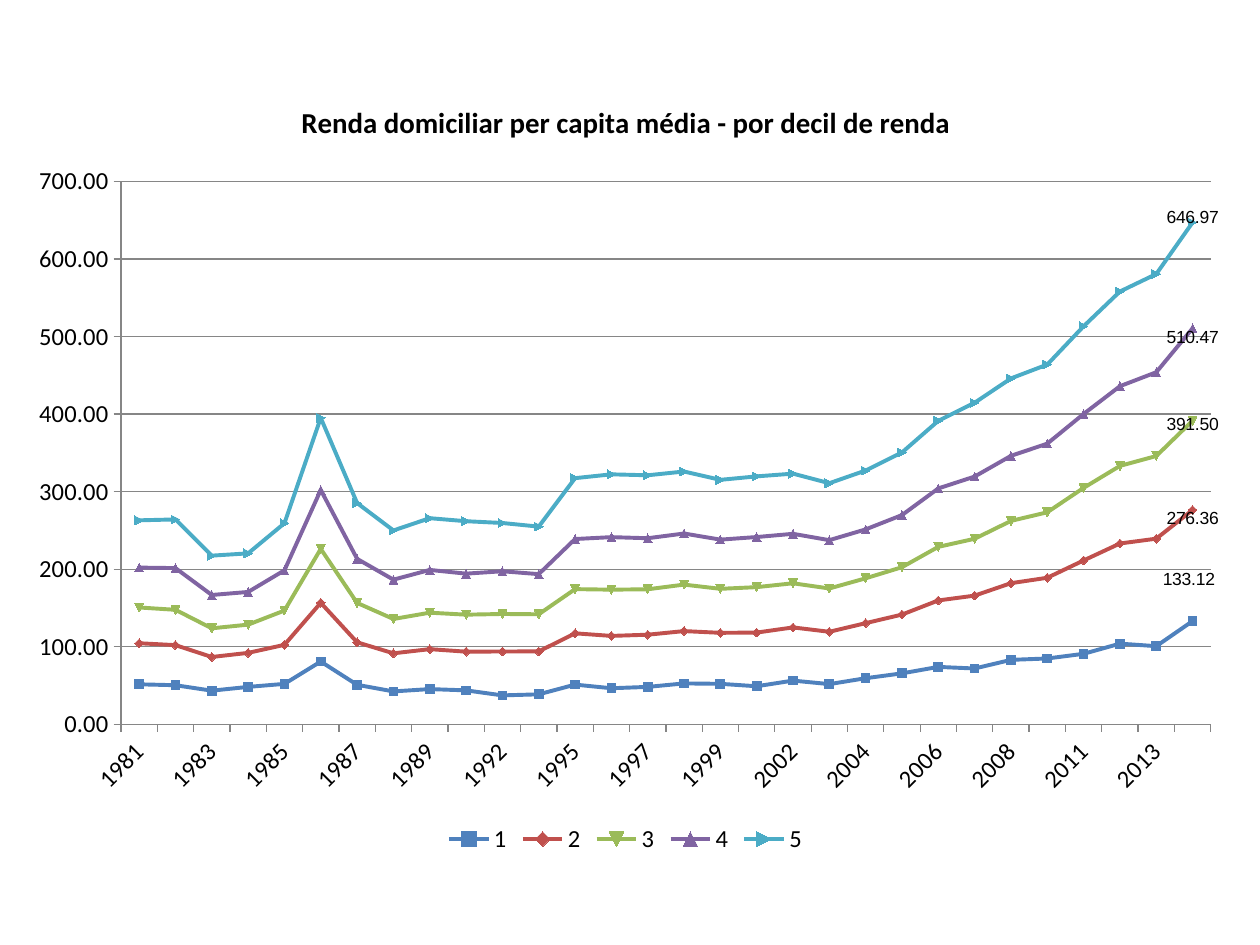
import pptx
import pptx.chart.data
import pptx.dml.color
import pptx.enum.chart
import pptx.oxml
import pptx.oxml.ns
import pptx.util
from pptx.util import Inches

CHART_WIDTH, CHART_HEIGHT = 9.69, 6.22
TITLE = "Renda domiciliar per capita média - por decil de renda"
SKIPPED_YEARS = (1991, 1994, 2000, 2010)
YEARS = [str(y) for y in range(1981, 2015) if y not in SKIPPED_YEARS]
NUMBER_FORMAT = "#,##0.00"
DECILES = [
    ("1", "4F81BD", (-0.03, -0.33), [
        51.54, 50.42, 43.4, 48.22, 52.15, 80.92, 50.96, 42.42, 45.46, 43.75,
        37.34, 38.68, 51.2, 46.52, 48.23, 52.71, 52.23, 49.08, 56.34, 51.84,
        59.42, 65.73, 74.0, 71.97, 83.08, 84.89, 90.92, 104.03, 100.72, 133.12]),
    ("2", "C0504D", (0, 0.07), [
        104.54, 102.09, 86.81, 92.12, 102.45, 156.65, 105.72, 91.51, 96.88, 93.67,
        93.92, 93.97, 117.31, 113.97, 115.5, 120.18, 117.97, 118.27, 124.89, 119.27,
        130.44, 141.48, 159.68, 165.88, 181.94, 188.9, 211.24, 233.12, 239.32, 276.36]),
    ("3", "9BBB59", (0, 0.03), [
        150.6, 147.61, 123.78, 128.51, 146.64, 226.14, 156.52, 135.77, 143.9, 141.33,
        142.22, 141.89, 174.27, 173.58, 174.09, 180.12, 174.67, 176.81, 181.8, 175.08,
        188.24, 202.57, 228.79, 239.18, 262.23, 273.33, 304.81, 333.18, 345.88, 391.5]),
    ("4", "8064A2", (0, 0.07), [
        202.04, 201.38, 166.73, 170.63, 198.5, 302.07, 213.3, 186.51, 199.01, 194.25,
        197.28, 193.59, 238.89, 241.29, 239.9, 245.97, 238.07, 241.41, 245.59, 237.38,
        251.25, 269.73, 304.1, 319.35, 346.16, 361.91, 400.11, 435.95, 453.9, 510.47]),
    ("5", "4BACC6", (0, -0.04), [
        262.97, 264.13, 217.47, 220.39, 259.19, 395.06, 285.23, 249.91, 265.7, 261.8,
        259.54, 254.87, 317.3, 322.24, 321.06, 325.9, 315.15, 319.64, 323.16, 310.83,
        327.15, 350.5, 391.34, 414.6, 445.99, 463.84, 513.2, 558.0, 580.51, 646.97]),
]


def rgb(color):
    return pptx.dml.color.RGBColor.from_string(color)


def set_font(font, size, name="Calibri", bold=False):
    font.size = pptx.util.Pt(size)
    font.name = name
    font.bold = bold
    font.color.rgb = rgb("000000")


def set_line(line, color, width):
    line.color.rgb = rgb(color)
    line.width = pptx.util.Pt(width)


def set_layout(parent, index, x, y, w=None, h=None, **modes):
    for old in parent.findall(pptx.oxml.ns.qn("c:layout")):
        parent.remove(old)
    settings = dict(modes, x=x / CHART_WIDTH, y=y / CHART_HEIGHT)
    if w and h:
        settings.update(w=w / CHART_WIDTH, h=h / CHART_HEIGHT)
    values = "".join(f'<c:{k} val="{v}"/>' for k, v in settings.items())
    xml = (f'<c:layout {pptx.oxml.ns.nsdecls("c")}>'
           f'<c:manualLayout>{values}</c:manualLayout></c:layout>')
    parent.insert(index, pptx.oxml.parse_xml(xml))


def hide_leader_lines(labels):
    tag = pptx.oxml.ns.qn("c:showLeaderLines")
    for old in labels.findall(tag):
        labels.remove(old)
    labels.append(pptx.oxml.parse_xml(
        f'<c:showLeaderLines {pptx.oxml.ns.nsdecls("c")} val="0"/>'))
    chart15 = "http://schemas.microsoft.com/office/drawing/2012/chart"
    labels.append(pptx.oxml.parse_xml(
        f'<c:extLst {pptx.oxml.ns.nsdecls("c")}>'
        f'<c:ext uri="{{CE6537A1-D6FC-4f65-9D91-7224C49458BB}}" xmlns:c15="{chart15}">'
        '<c15:showLeaderLines val="0"/></c:ext></c:extLst>'))


def add_line_chart(s):
    data = pptx.chart.data.CategoryChartData(number_format=NUMBER_FORMAT)
    data.categories = YEARS
    for name, _, _, values in DECILES:
        data.add_series(name, values)
    frame = s.shapes.add_chart(
        pptx.enum.chart.XL_CHART_TYPE.LINE_MARKERS,
        Inches(0.12), Inches(0.6), Inches(CHART_WIDTH), Inches(CHART_HEIGHT), data)
    chart = frame.chart
    set_font(chart.font, 14)
    chart.plots[0].vary_by_categories = False
    set_layout(chart._chartSpace.chart.plotArea, 0, 0.84, 0.84, 8.65, 4.31,
               layoutTarget="inner", xMode="edge", yMode="edge")
    return chart


def format_title(chart):
    chart.has_title = True
    title = chart.chart_title
    title.include_in_layout = True
    p = title.text_frame.paragraphs[0]
    p.text = TITLE
    set_font(p.font, 16.5, bold=True)
    set_layout(title._element, 1, 2.23, 0.17, xMode="edge", yMode="edge")


def format_legend(chart):
    chart.has_legend = True
    chart.legend.position = pptx.enum.chart.XL_LEGEND_POSITION.BOTTOM
    chart.legend.include_in_layout = False
    set_font(chart.legend.font, 14)


def format_axes(chart):
    for axis in (chart.category_axis, chart.value_axis):
        axis.major_tick_mark = pptx.enum.chart.XL_TICK_MARK.OUTSIDE
        set_line(axis.format.line, "868686", 0.75)
        set_font(axis.tick_labels.font, 14)
    values = chart.value_axis
    values.minimum_scale, values.maximum_scale, values.major_unit = 0, 700, 100
    values.has_major_gridlines = True
    set_line(values.major_gridlines.format.line, "868686", 0.75)
    values.tick_labels.number_format = NUMBER_FORMAT
    values.tick_labels.number_format_is_linked = False


def format_series(series, color, offset):
    series.smooth = False
    set_line(series.format.line, color, 2.25)
    series.marker.format.fill.solid()
    series.marker.format.fill.fore_color.rgb = rgb(color)
    set_line(series.marker.format.line, color, 0.75)
    series.data_labels.show_value = False
    label = series.points[len(YEARS) - 1].data_label
    set_font(label.font, 10, "Arial")
    label.position = pptx.enum.chart.XL_LABEL_POSITION.CENTER
    labels = series.data_labels._element
    set_layout(labels[0], 1, *offset)
    hide_leader_lines(labels)


def main():
    prs = pptx.Presentation()
    prs.slide_width, prs.slide_height = Inches(10), Inches(7.5)
    s = prs.slides.add_slide(prs.slide_layouts[6])
    chart = add_line_chart(s)
    format_title(chart)
    format_legend(chart)
    format_axes(chart)
    for series, (_, color, offset, _) in zip(chart.plots[0].series, DECILES):
        format_series(series, color, offset)
    prs.save("out.pptx")


if __name__ == "__main__":
    main()
